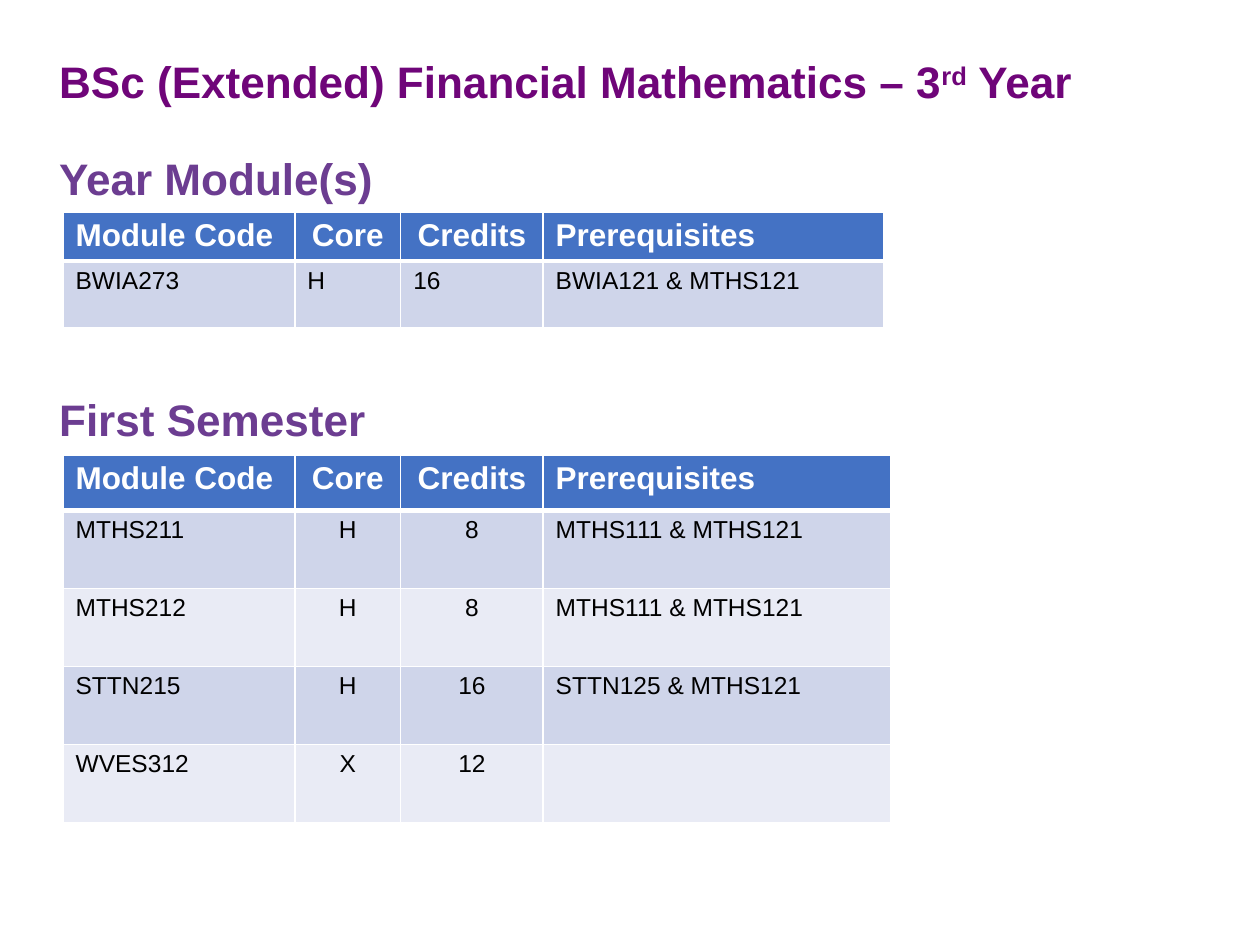
"""Build the third-year module slide for BSc (Extended) Financial Mathematics."""
from lxml import etree
from pptx import Presentation
from pptx.dml.color import RGBColor
from pptx.enum.text import MSO_ANCHOR, MSO_AUTO_SIZE, PP_ALIGN
from pptx.oxml.ns import qn
from pptx.util import Pt

LEFT, CENTER = PP_ALIGN.LEFT, PP_ALIGN.CENTER
TOP = MSO_ANCHOR.TOP
NO_AUTOFIT = MSO_AUTO_SIZE.NONE
PURPLE = RGBColor(0x6F, 0x05, 0x79)
VIOLET = RGBColor(0x6C, 0x3D, 0x91)
WHITE = RGBColor(0xFF, 0xFF, 0xFF)
BLACK = RGBColor(0x00, 0x00, 0x00)
HEADER_BLUE = RGBColor(0x44, 0x72, 0xC4)
BANDS = [RGBColor(0xE9, 0xEB, 0xF5), RGBColor(0xCF, 0xD5, 0xEA)]


def add_text(paragraph, text, size=25.2, color=VIOLET, bold=True, align=LEFT, baseline=0):
    paragraph.alignment = align
    run = paragraph.add_run()
    run.text = text
    run.font.name = "Arial"
    run.font.size = Pt(size)
    run.font.bold = bold
    run.font.color.rgb = color
    if baseline:
        run.font._element.set("baseline", str(baseline * 1000))


def add_border(cell, side, width):
    line = etree.SubElement(cell._tc.get_or_add_tcPr(), qn(f"a:ln{side}"), w=str(Pt(width)))
    fill = etree.SubElement(line, qn("a:solidFill"))
    etree.SubElement(fill, qn("a:srgbClr"), val=str(WHITE))


prs = Presentation()
prs.slide_width, prs.slide_height = Pt(720), Pt(540)
slide = prs.slides.add_slide(prs.slide_layouts[5])

title = slide.shapes.title
title.left, title.top, title.width, title.height = Pt(26.6), Pt(28.8), Pt(666), Pt(46)
headings = title.text_frame
headings.word_wrap = True
headings.auto_size = NO_AUTOFIT
headings.vertical_anchor = TOP
headings.margin_top = Pt(5.6)
programme = headings.paragraphs[0]
programme.line_spacing = 0.9
add_text(programme, "BSc (Extended) Financial Mathematics – 3", color=PURPLE)
add_text(programme, "rd", color=PURPLE, baseline=30)
add_text(programme, " Year", color=PURPLE)
for heading, gap in [("Year Module(s)", 28.2), ("First Semester", 110.5)]:
    section = headings.add_paragraph()
    section.line_spacing = 0.9
    section.space_before = Pt(gap)
    add_text(section, heading)

HEADER = ["Module Code", "Core", "Credits", "Prerequisites"]
year_modules = [["BWIA273", "H", "16", "BWIA121 & MTHS121"]]
first_semester = [
    ["MTHS211", "H", "8", "MTHS111 & MTHS121"],
    ["MTHS212", "H", "8", "MTHS111 & MTHS121"],
    ["STTN215", "H", "16", "STTN125 & MTHS121"],
    ["WVES312", "X", "12", ""],
]

for modules, top, last_width, header_height, row_height, number_align in [
    (first_semester, 260, 198.7, 31.6, 44.6, CENTER),
    (year_modules, 121, 194.4, 28.1, 38.2, LEFT),
]:
    widths = [132.5, 60.5, 81.4, last_width]
    heights = [header_height] + [row_height] * len(modules)
    table = slide.shapes.add_table(
        len(heights), len(widths), Pt(36), Pt(top), Pt(sum(widths)), Pt(sum(heights))
    ).table
    for column, width in zip(table.columns, widths):
        column.width = Pt(width)
    for r, values in enumerate([HEADER] + modules):
        table.rows[r].height = Pt(heights[r])
        is_header = r == 0
        for c, value in enumerate(values):
            cell = table.cell(r, c)
            for side in "LRTB":
                below_header = (r, side) in [(0, "B"), (1, "T")]
                add_border(cell, side, 3 if below_header else 1)
            cell.fill.solid()
            cell.fill.fore_color.rgb = HEADER_BLUE if is_header else BANDS[r % 2]
            if value:
                middle_align = CENTER if is_header else number_align
                add_text(
                    cell.text_frame.paragraphs[0],
                    value,
                    size=18 if is_header else 14,
                    color=WHITE if is_header else BLACK,
                    bold=is_header,
                    align=middle_align if c in (1, 2) else LEFT,
                )

prs.save("out.pptx")
